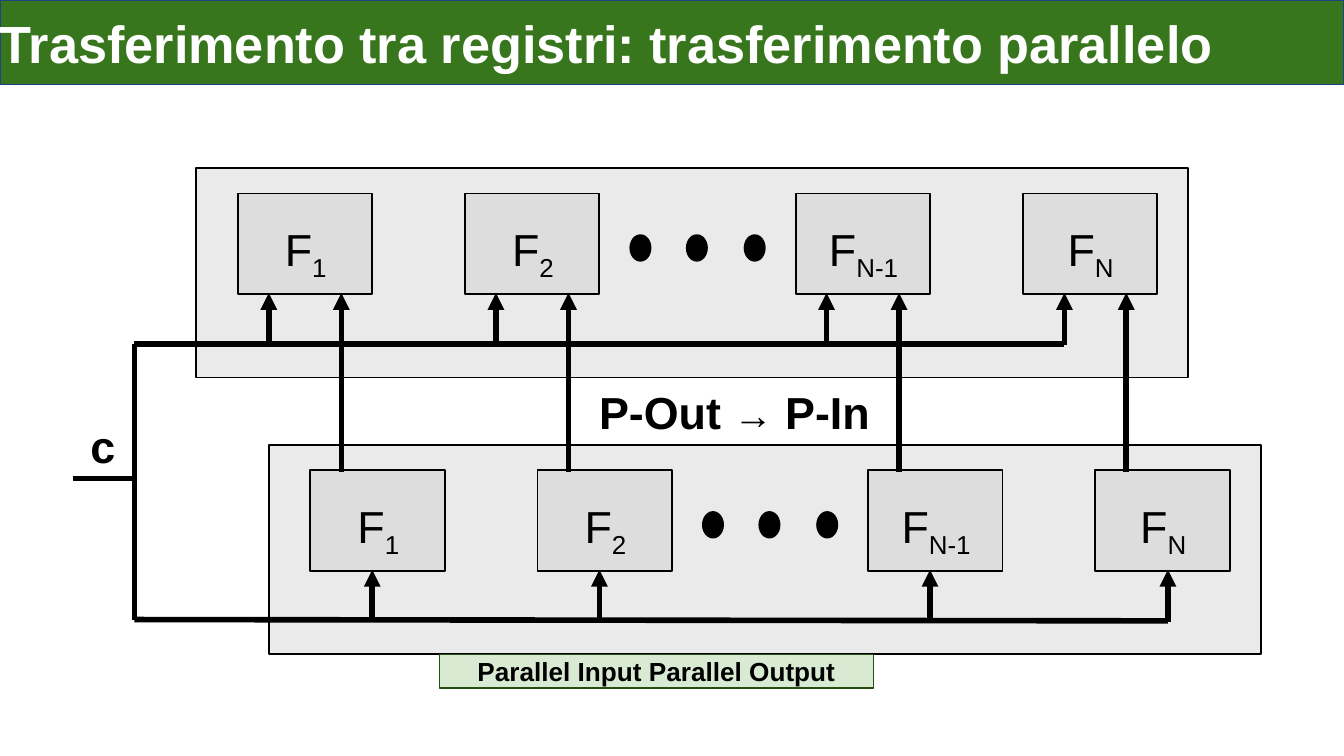
from lxml import etree
from pptx import Presentation
from pptx.dml.color import RGBColor
from pptx.enum import shapes, text
from pptx.oxml.ns import qn
from pptx.util import Pt

PX = 9144  # 100 px to the inch
THEME = {
    "font": "Arial",
    "ink": "000000", "panel": "EAEAEA", "cell": "DDDDDD",
    "bar": "38761D", "edge": "1C4587", "white": "FFFFFF",
    "tag": "D9EAD3", "rim": "274E13",
    "title": 28, "label": 24, "arrow": 21, "note": 14,
}
RECT = shapes.MSO_SHAPE.RECTANGLE
OVAL = shapes.MSO_SHAPE.OVAL
MID = text.MSO_ANCHOR.MIDDLE

# Widescreen slide, 16 to 9
deck = Presentation()
deck.slide_width = 1000 * PX
deck.slide_height = deck.slide_width * 9 // 16
page = deck.slides.add_slide(deck.slide_layouts[6])


def box(x, y, w, h, fill=None, line="ink", width=1, kind=RECT, runs=(),
        color="ink", align=text.PP_ALIGN.CENTER, anchor=text.MSO_ANCHOR.TOP,
        pad=(9, 5)):
    """Draw a shape; each run is (words, size, bold, baseline)."""
    form = page.shapes.add_shape(kind, x * PX, y * PX, w * PX, h * PX)
    form.shadow.inherit = False
    if fill:
        form.fill.solid()
        form.fill.fore_color.rgb = RGBColor.from_string(THEME[fill])
        form.line.color.rgb = RGBColor.from_string(THEME[line])
        form.line.width = Pt(width)
    else:
        form.fill.background()
        form.line.fill.background()
    frame = form.text_frame
    frame.word_wrap = True
    frame.vertical_anchor = anchor
    frame.margin_left = frame.margin_right = pad[0] * PX
    frame.margin_top = frame.margin_bottom = pad[1] * PX
    para = frame.paragraphs[0]
    para.alignment = align
    for words, size, bold, base in runs:
        run = para.add_run()
        run.text = words
        run.font.name = THEME["font"]
        run.font.size = Pt(THEME[size])
        run.font.bold = bold
        run.font.color.rgb = RGBColor.from_string(THEME[color])
        if base:
            run.font._element.set("baseline", str(base * 1000))


def wire(x, y, end, stop, head=False):
    """Draw a thick line from (x, y) to (end, stop)."""
    link = page.shapes.add_connector(
        shapes.MSO_CONNECTOR.STRAIGHT, x * PX, y * PX, end * PX, stop * PX)
    link.line.color.rgb = RGBColor.from_string(THEME["ink"])
    link.line.width = Pt(3)
    if head:
        etree.SubElement(link.line._get_or_add_ln(), qn("a:tailEnd"), type="triangle")
    etree.SubElement(link._element.spPr, qn("a:effectLst"))


# Registers: panel, cells, dots and clock arrows
cells = [(31, "1"), (200, "2"), (446, "N-1"), (615, "N")]
for left, top, clock in [(146, 125, 23), (200, 331, 46)]:
    box(left, top, 738, 156, "panel")
    for step, sub in cells:
        x = left + step
        wide = 85 if sub == "N-1" else 69
        box(x, top + 19, 100, 75, "cell")
        box(x + (101 - wide) // 2, top + 35, wide, 48,
            runs=[("F", "label", False, 0), (sub, "label", False, -25)])
        pin = x + clock + (8 if sub == "N" else 0)
        wire(pin, top + 132, pin, top + 93, head=True)
    for step in (323, 365, 408):
        box(left + step, top + 50, 15, 19, "ink", kind=OVAL)

# Clock lines
wire(100, 256, 792, 256)
wire(100, 461, 869, 462)
wire(100, 256, 100, 461)
wire(54, 356, 100, 356)
box(38, 307, 77, 43, runs=[("c", "label", True, 0)])

# Parallel transfer from the lower to the upper register
for step, sub in cells:
    x = 146 + step + 77
    wire(x, 351, x, 218, head=True)
box(408, 281, 277, 43, runs=[
    ("P-Out ", "label", True, 0),
    ("→", "arrow", False, 0),
    (" P-In", "label", True, 0),
])

# Title bar and caption
box(0, 0, 1000, 63, "bar", "edge", 0.75, color="white",
    align=text.PP_ALIGN.LEFT, anchor=MID, pad=(0, 0),
    runs=[("Trasferimento tra registri: trasferimento parallelo", "title", True, 0)])
box(327, 487, 323, 25, "tag", "rim", 0.75, anchor=MID, pad=(10, 10),
    runs=[("Parallel Input Parallel Output", "note", True, 0)])

deck.save("out.pptx")
